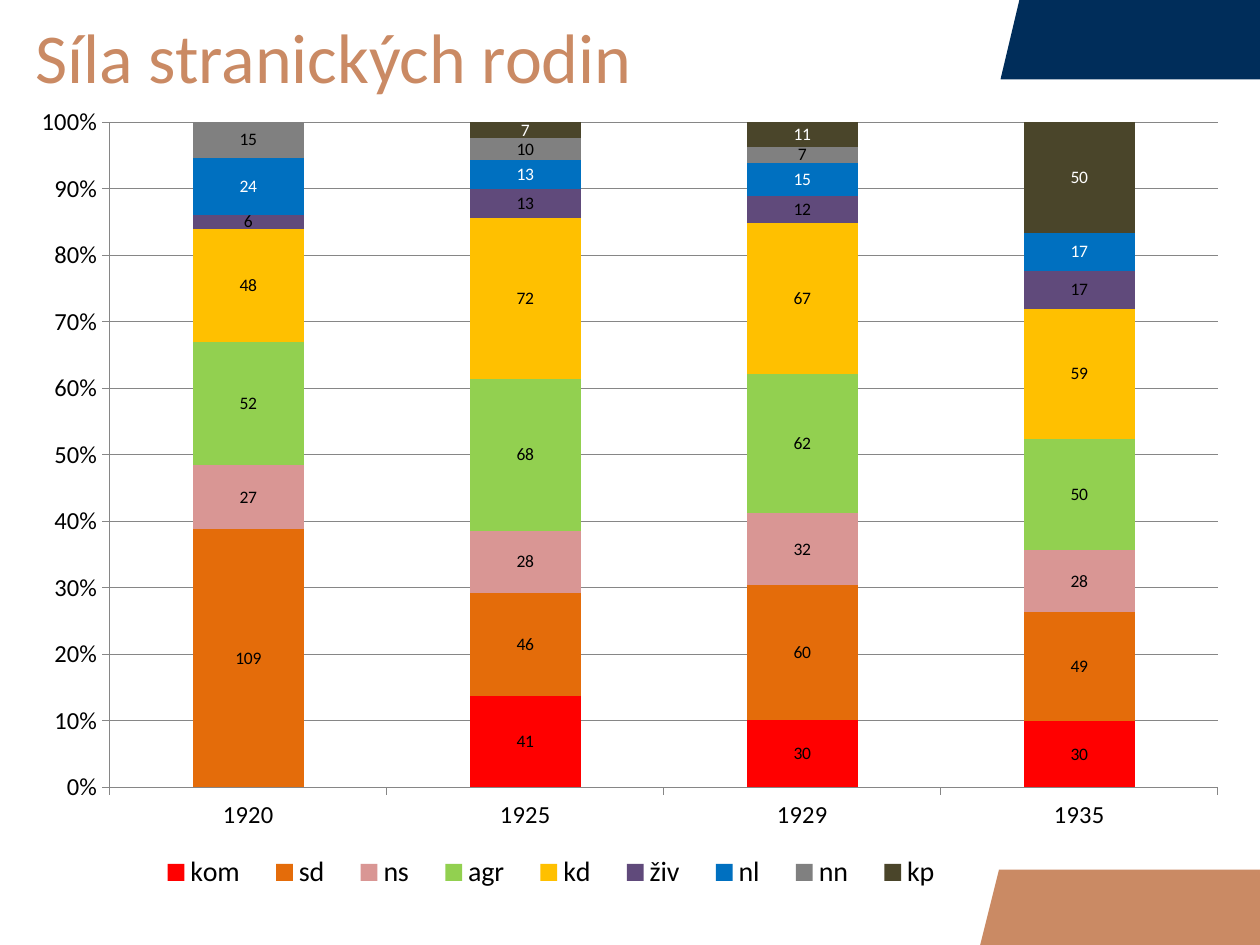
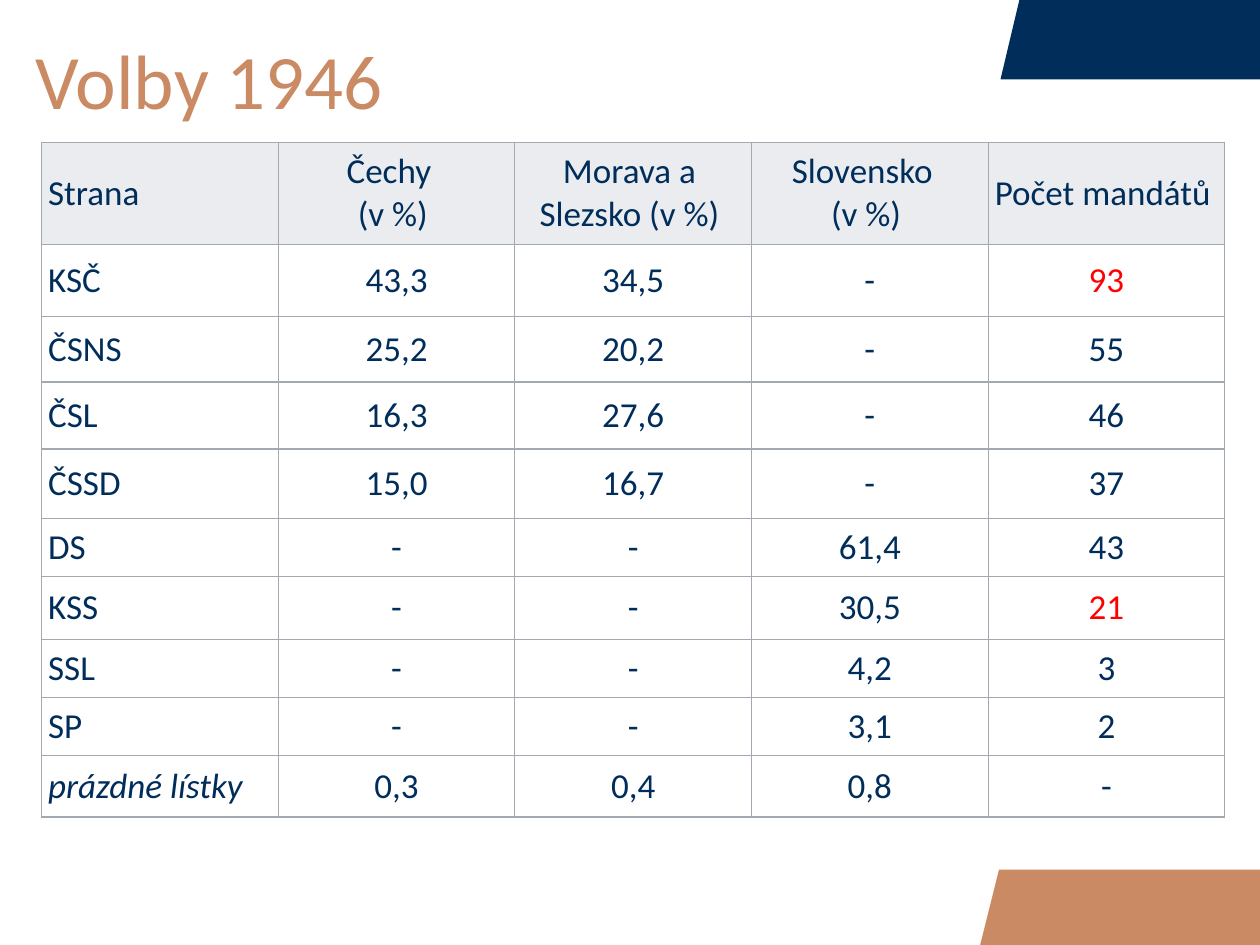
"""Build two slides on party strength: a stacked chart and a table of votes."""
from lxml import etree
from pptx import Presentation
from pptx.chart.data import CategoryChartData
from pptx.dml.color import RGBColor
from pptx.enum.chart import XL_CHART_TYPE, XL_LEGEND_POSITION, XL_TICK_MARK
from pptx.enum.text import MSO_ANCHOR, MSO_AUTO_SIZE, PP_ALIGN
from pptx.oxml.ns import qn
from pptx.util import Cm, Pt

STACKED = XL_CHART_TYPE.COLUMN_STACKED_100
BOTTOM = XL_LEGEND_POSITION.BOTTOM
OUT = XL_TICK_MARK.OUTSIDE
MIDDLE = MSO_ANCHOR.MIDDLE
FIXED = MSO_AUTO_SIZE.NONE
LEFT, CENTER = PP_ALIGN.LEFT, PP_ALIGN.CENTER

NAVY = RGBColor(0x00, 0x2D, 0x5A)
COPPER = RGBColor(0xCA, 0x8A, 0x64)
RED = RGBColor(0xFF, 0x00, 0x00)
BLACK = RGBColor(0x00, 0x00, 0x00)
WHITE = RGBColor(0xFF, 0xFF, 0xFF)
PALE = RGBColor(0xEA, 0xEC, 0xF0)
BORDER = RGBColor(0xA2, 0xA9, 0xB1)
GRID = RGBColor(0x86, 0x86, 0x86)
ORANGE = RGBColor(0xE4, 0x6C, 0x0A)
PINK = RGBColor(0xD9, 0x96, 0x94)
GREEN = RGBColor(0x92, 0xD0, 0x50)
GOLD = RGBColor(0xFF, 0xC0, 0x00)
PURPLE = RGBColor(0x60, 0x4A, 0x7B)
BLUE = RGBColor(0x00, 0x70, 0xC0)
GRAY = RGBColor(0x80, 0x80, 0x80)
OLIVE = RGBColor(0x4A, 0x45, 0x2A)

FONT = "Calibri"
WIDTH, HEIGHT = 25.4, 19.05
SLANT = 0.38

YEARS = ["1920", "1925", "1929", "1935"]
PARTIES = [
    ("kom", [None, 41, 30, 30], RED, BLACK),
    ("sd", [109, 46, 60, 49], ORANGE, BLACK),
    ("ns", [27, 28, 32, 28], PINK, BLACK),
    ("agr", [52, 68, 62, 50], GREEN, BLACK),
    ("kd", [48, 72, 67, 59], GOLD, BLACK),
    ("živ", [6, 13, 12, 17], PURPLE, BLACK),
    ("nl", [24, 13, 15, 17], BLUE, WHITE),
    ("nn", [15, 10, 7, None], GRAY, BLACK),
    ("kp", [None, 7, 11, 50], OLIVE, WHITE),
]
VOTES = [
    ["Strana", "Čechy \n(v %)", "Morava a Slezsko (v %)",
     "Slovensko \n(v %)", "Počet mandátů"],
    ["KSČ", "43,3", "34,5", "-", "93"],
    ["ČSNS", "25,2", "20,2", "-", "55"],
    ["ČSL", "16,3", "27,6", "-", "46"],
    ["ČSSD", "15,0", "16,7", "-", "37"],
    ["DS", "-", "-", "61,4", "43"],
    ["KSS", "-", "-", "30,5", "21"],
    ["SSL", "-", "-", "4,2", "3"],
    ["SP", "-", "-", "3,1", "2"],
    ["prázdné lístky", "0,3", "0,4", "0,8", "-"],
]
ROWS = [2.06, 1.45, 1.32, 1.35, 1.4, 1.17, 1.27, 1.17, 1.17, 1.24]
REDS = {(1, 4), (6, 4)}


class Deck:
    def __init__(self):
        self.prs = Presentation()
        self.prs.slide_width, self.prs.slide_height = Cm(WIDTH), Cm(HEIGHT)
        self.slide = None

    def start(self, text, top, height, size):
        self.slide = self.prs.slides.add_slide(self.prs.slide_layouts[5])
        self.band(20.17, 0, 1.6, NAVY)
        self.band(19.76, 17.53, HEIGHT - 17.53, COPPER)
        title = self.slide.shapes.title
        title.left, title.top = Cm(0), Cm(top)
        title.width, title.height = Cm(WIDTH), Cm(height)
        frame = title.text_frame
        frame.text = text
        frame.auto_size = FIXED
        frame.word_wrap = True
        frame.vertical_anchor = MIDDLE
        frame.margin_left = frame.margin_right = Cm(0.71)
        frame.margin_top = frame.margin_bottom = Cm(0.13)
        frame.paragraphs[0].alignment = LEFT
        self.style(frame.paragraphs[0].font, size, COPPER)

    def style(self, font, size, color):
        font.name, font.size = FONT, Pt(size)
        font.color.rgb = color

    def band(self, left, top, height, color):
        base = Cm(top + height)
        form = self.slide.shapes.build_freeform(Cm(left), base)
        form.add_line_segments([(Cm(left + SLANT), Cm(top)),
                                (Cm(WIDTH), Cm(top)), (Cm(WIDTH), base)])
        shape = form.convert_to_shape()
        shape.shadow.inherit = False
        shape.fill.solid()
        shape.fill.fore_color.rgb = color
        shape.line.fill.background()

    def place(self, part, index, inner, box):
        for old in part.findall(qn("c:layout")):
            part.remove(old)
        layout = etree.Element(qn("c:layout"))
        manual = etree.SubElement(layout, qn("c:manualLayout"))
        pairs = [("layoutTarget", "inner")] if inner else []
        pairs += [("xMode", "edge"), ("yMode", "edge"), *zip("xywh", box)]
        for tag, val in pairs:
            etree.SubElement(manual, qn("c:" + tag), val=str(val))
        part.insert(index, layout)

    def chart(self, left, top, width, height):
        data = CategoryChartData()
        data.categories = YEARS
        for name, vals, *_ in PARTIES:
            data.add_series(name, vals)
        chart = self.slide.shapes.add_chart(
            STACKED, Cm(left), Cm(top), Cm(width), Cm(height), data).chart
        self.style(chart.font, 10, BLACK)
        chart.has_title = False
        plot = chart.plots[0]
        plot.gap_width, plot.overlap = 150, 100
        plot.vary_by_categories = False
        for series, (*_, fill, ink) in zip(plot.series, PARTIES):
            series.invert_if_negative = False
            series.format.fill.solid()
            series.format.fill.fore_color.rgb = fill
            labels = series.data_labels
            labels.show_value = True
            self.style(labels.font, 10, ink)
        self.axes(chart)
        chart.has_legend = True
        legend = chart.legend
        legend.position = BOTTOM
        legend.include_in_layout = False
        self.style(legend.font, 16, BLACK)
        self.place(legend._element, 1, False, (0.1, 0.93, 0.67, 0.07))
        area = chart._chartSpace.chart.plotArea
        self.place(area, 0, True, (0.075, 0.039, 0.904, 0.821))

    def axes(self, chart):
        rise = chart.value_axis
        rise.has_major_gridlines = True
        rise.maximum_scale, rise.minimum_scale = 1, 0
        rise.major_unit = 0.1
        rise.tick_labels.number_format = "0%"
        rise.tick_labels.number_format_is_linked = False
        for axis in (chart.category_axis, rise):
            axis.major_tick_mark = OUT
            self.style(axis.tick_labels.font, 14, BLACK)
        for owner in (chart.category_axis, rise, rise.major_gridlines):
            owner.format.line.color.rgb = GRID
            owner.format.line.width = Pt(0.75)

    def table(self, left, top, width):
        count = len(VOTES[0])
        table = self.slide.shapes.add_table(
            len(VOTES), count, Cm(left), Cm(top), Cm(width), Cm(sum(ROWS))).table
        table.first_row = table.horz_banding = False
        for col in table.columns:
            col.width = Cm(width / count)
        for r, (row, height) in enumerate(zip(VOTES, ROWS)):
            table.rows[r].height = Cm(height)
            for c, text in enumerate(row):
                self.cell(table.cell(r, c), text, r, c)

    def cell(self, cell, text, r, c):
        cell.text = text
        cell.vertical_anchor = MIDDLE
        cell.margin_left = Cm(0.13)
        cell.margin_right = Cm(0.13 if r else 0.28)
        cell.margin_top = cell.margin_bottom = Cm(0.08)
        for para in cell.text_frame.paragraphs:
            para.alignment = CENTER if c else LEFT
            self.style(para.font, 20, RED if (r, c) in REDS else NAVY)
            para.font.italic = r == len(VOTES) - 1 and c == 0
        self.edges(cell)
        if r:
            cell.fill.background()
        else:
            cell.fill.solid()
            cell.fill.fore_color.rgb = PALE

    def edges(self, cell):
        props = cell._tc.get_or_add_tcPr()
        for side in "LRTB":
            line = etree.SubElement(props, qn("a:ln" + side), w=str(Pt(0.75)))
            fill = etree.SubElement(line, qn("a:solidFill"))
            etree.SubElement(fill, qn("a:srgbClr"), val=str(BORDER))


def main():
    deck = Deck()
    deck.start("Síla stranických rodin", 0.53, 1.19, 40)
    deck.chart(0.36, 1.83, 24.71, 16.33)
    deck.start("Volby 1946", 0.3, 2.57, 44)
    deck.table(0.84, 2.87, 23.85)
    deck.prs.save("out.pptx")


if __name__ == "__main__":
    main()
